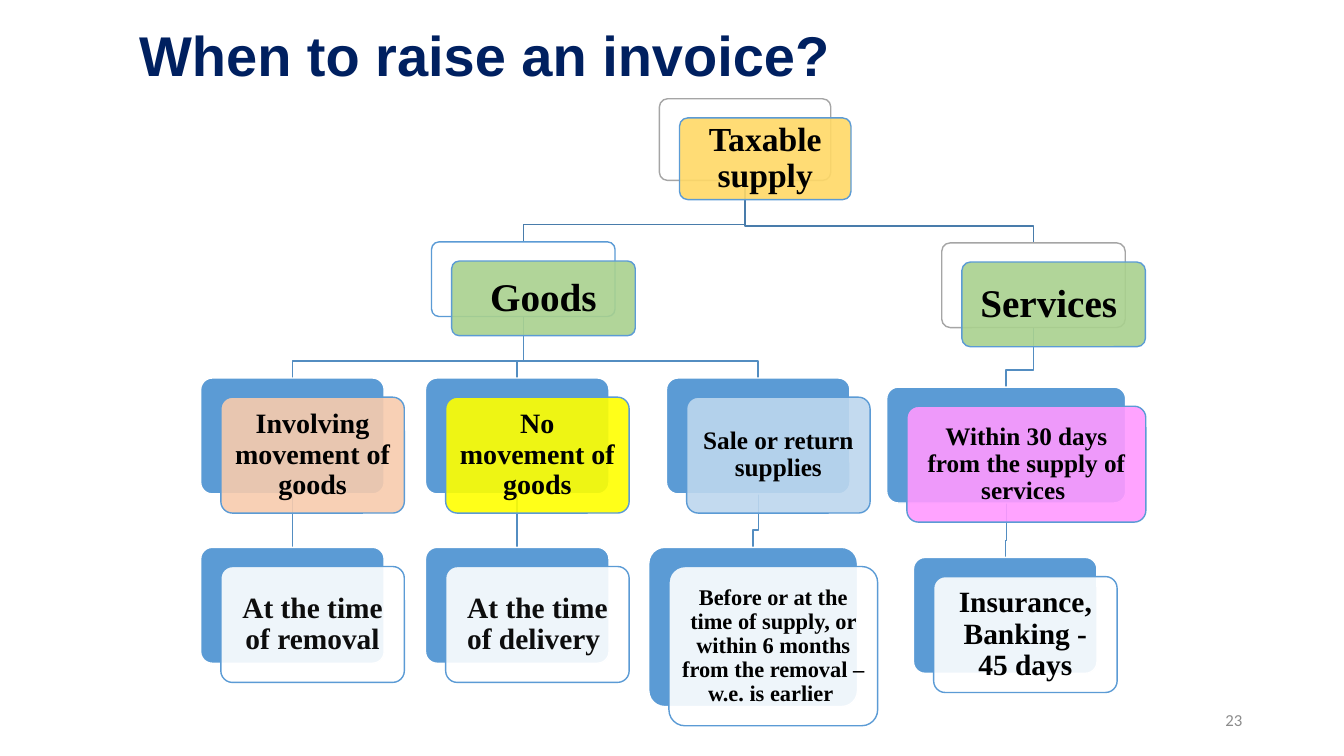
from lxml.etree import SubElement
from pptx import Presentation
from pptx.dml.color import RGBColor
from pptx.enum.shapes import MSO_SHAPE
from pptx.enum.text import MSO_ANCHOR, PP_ALIGN
from pptx.oxml.ns import qn
from pptx.util import Inches, Pt

NAVY = RGBColor(0x00, 0x20, 0x60)
BLACK = RGBColor(0x00, 0x00, 0x00)
SOFT_BLACK = RGBColor(0x0D, 0x0D, 0x0D)
WHITE = RGBColor(0xFF, 0xFF, 0xFF)
GRAY = RGBColor(0xA5, 0xA5, 0xA5)
NUMBER_GRAY = RGBColor(0x8C, 0x8C, 0x8C)
BLUE = RGBColor(0x5B, 0x9B, 0xD5)
TOP_LINK = RGBColor(0x49, 0x7C, 0xAB)
LOWER_LINK = RGBColor(0x53, 0x8D, 0xC1)
GOLD = RGBColor(0xFF, 0xD9, 0x66)
GREEN = RGBColor(0xA9, 0xD1, 0x8E)
PEACH = RGBColor(0xF8, 0xCB, 0xAD)
YELLOW = RGBColor(0xFF, 0xFF, 0x00)
PALE_BLUE = RGBColor(0xBD, 0xD7, 0xEE)
PINK = RGBColor(0xFF, 0x99, 0xFF)

TITLE = "When to raise an invoice?"
SLIDE_NUMBER = "23"

# Back card styles: fill, outline
GRAY_OUTLINE = (WHITE, GRAY)
BLUE_OUTLINE = (WHITE, BLUE)
SOLID = (BLUE, WHITE)

# name: (parent, text, points, text colour, card fill, back style)
CARDS = {
    "supply": (None, "Taxable supply", 24, BLACK, GOLD, GRAY_OUTLINE),
    "goods": ("supply", "Goods", 28, BLACK, GREEN, BLUE_OUTLINE),
    "movement": ("goods", "Involving movement of goods", 20, BLACK, PEACH, SOLID),
    "removal": ("movement", "At the time of removal", 21, SOFT_BLACK, WHITE, SOLID),
    "no movement": ("goods", "No movement of goods", 20, BLACK, YELLOW, SOLID),
    "delivery": ("no movement", "At the time of delivery ", 21, SOFT_BLACK, WHITE, SOLID),
    "return": ("goods", "Sale or return supplies", 18, BLACK, PALE_BLUE, SOLID),
    "earlier": ("return", "Before or at the time of supply, or within 6 months "
                "from the removal – w.e. is earlier ", 16, BLACK, WHITE, SOLID),
    "services": ("supply", "Services ", 28, BLACK, GREEN, GRAY_OUTLINE),
    "30 days": ("services", "Within 30 days from the supply of services ",
                18, BLACK, PINK, SOLID),
    "45 days": ("30 days", "Insurance, Banking - 45 days", 21, BLACK, WHITE, SOLID),
}

# Layout in inches: row tops, column centres, card sizes
GOODS_ROWS = (2.4, 3.75, 5.43)
SERVICE_ROWS = (2.41, 3.84, 5.53)
CARD_WIDTH, CARD_HEIGHT = 1.82, 1.15
PLACES = {  # name: (centre, top, width, height) of the back card
    "supply": (7.39, 0.98, 1.7, 0.81),
    "goods": (5.19, GOODS_ROWS[0], CARD_WIDTH, 0.74),
    "movement": (2.9, GOODS_ROWS[1], CARD_WIDTH, CARD_HEIGHT),
    "removal": (2.9, GOODS_ROWS[2], CARD_WIDTH, CARD_HEIGHT),
    "no movement": (5.13, GOODS_ROWS[1], CARD_WIDTH, CARD_HEIGHT),
    "delivery": (5.13, GOODS_ROWS[2], CARD_WIDTH, CARD_HEIGHT),
    "return": (7.52, GOODS_ROWS[1], CARD_WIDTH, CARD_HEIGHT),
    "earlier": (7.47, GOODS_ROWS[2], 2.07, 1.58),
    "services": (10.25, SERVICE_ROWS[0], CARD_WIDTH, 0.84),
    "30 days": (9.98, SERVICE_ROWS[1], 2.37, CARD_HEIGHT),
    "45 days": (9.97, SERVICE_ROWS[2], CARD_WIDTH, CARD_HEIGHT),
}
CARD_SHIFT = (0.2, 0.19)
ELBOW_RISE = 0.17
INSET_SHARE = 0.3  # text inset as a share of the font size


def format_text(text_frame, text, font_name, size, color, bold, alignment):
    text_frame.text = text
    text_frame.word_wrap = True
    text_frame.vertical_anchor = MSO_ANCHOR.MIDDLE
    paragraph = text_frame.paragraphs[0]
    paragraph.alignment = alignment
    paragraph.line_spacing = 0.9
    font = paragraph.runs[0].font
    font.name, font.size, font.bold = font_name, Pt(size), bold
    font.color.rgb = color


def add_link(slide, parent, child):
    """Draw an elbow from the parent's bottom centre to the child's top centre."""
    start_x, parent_top, _, parent_height = PLACES[parent]
    end_x, end_y, _, _ = PLACES[child]
    elbow_y = end_y - ELBOW_RISE
    builder = slide.shapes.build_freeform(
        Inches(start_x), Inches(parent_top + parent_height))
    corners = [(start_x, elbow_y), (end_x, elbow_y), (end_x, end_y)]
    builder.add_line_segments(
        [(Inches(x), Inches(y)) for x, y in corners], close=False)
    link = builder.convert_to_shape()
    link.shadow.inherit = False
    link.fill.background()
    link.line.color.rgb = TOP_LINK if parent == "supply" else LOWER_LINK
    link.line.width = Pt(1)


def add_rounded_box(slide, left, top, width, height, fill, outline):
    box = slide.shapes.add_shape(
        MSO_SHAPE.ROUNDED_RECTANGLE,
        Inches(left), Inches(top), Inches(width), Inches(height))
    box.adjustments[0] = 0.1
    box.shadow.inherit = False
    box.fill.solid()
    box.fill.fore_color.rgb = fill
    box.line.color.rgb = outline
    box.line.width = Pt(1)
    return box


def add_card(slide, name):
    """Draw a back card and, shifted over it, a translucent card with the text."""
    _, text, size, text_color, fill, back_style = CARDS[name]
    centre, top, width, height = PLACES[name]
    left = centre - width / 2
    add_rounded_box(slide, left, top, width, height, *back_style)
    card = add_rounded_box(slide, left + CARD_SHIFT[0], top + CARD_SHIFT[1],
                           width, height, fill, BLUE)
    color_element = card.fill._xPr.find(qn("a:solidFill"))[0]
    SubElement(color_element, qn("a:alpha"), val="90000")
    frame = card.text_frame
    inset = Pt(size * INSET_SHARE)
    frame.margin_left = frame.margin_right = inset
    frame.margin_top = frame.margin_bottom = inset
    format_text(frame, text, "Times New Roman", size, text_color, True,
                PP_ALIGN.CENTER)


def main():
    presentation = Presentation()
    presentation.slide_width = Inches(13.33)
    presentation.slide_height = Inches(7.5)
    slide = presentation.slides.add_slide(presentation.slide_layouts[5])

    title = slide.shapes.title
    title.left, title.top = Inches(1.28), Inches(-0.15)
    title.width, title.height = Inches(9.61), Inches(1.45)
    format_text(title.text_frame, TITLE, "Arial", 40, NAVY, True, PP_ALIGN.LEFT)

    for name, (parent, *_) in reversed(CARDS.items()):
        if parent:
            add_link(slide, parent, name)
    for name in CARDS:
        add_card(slide, name)

    number = slide.shapes.add_textbox(
        Inches(9.42), Inches(6.95), Inches(3), Inches(0.4))
    format_text(number.text_frame, SLIDE_NUMBER, "Calibri", 12, NUMBER_GRAY,
                False, PP_ALIGN.RIGHT)
    presentation.save("out.pptx")


if __name__ == "__main__":
    main()
